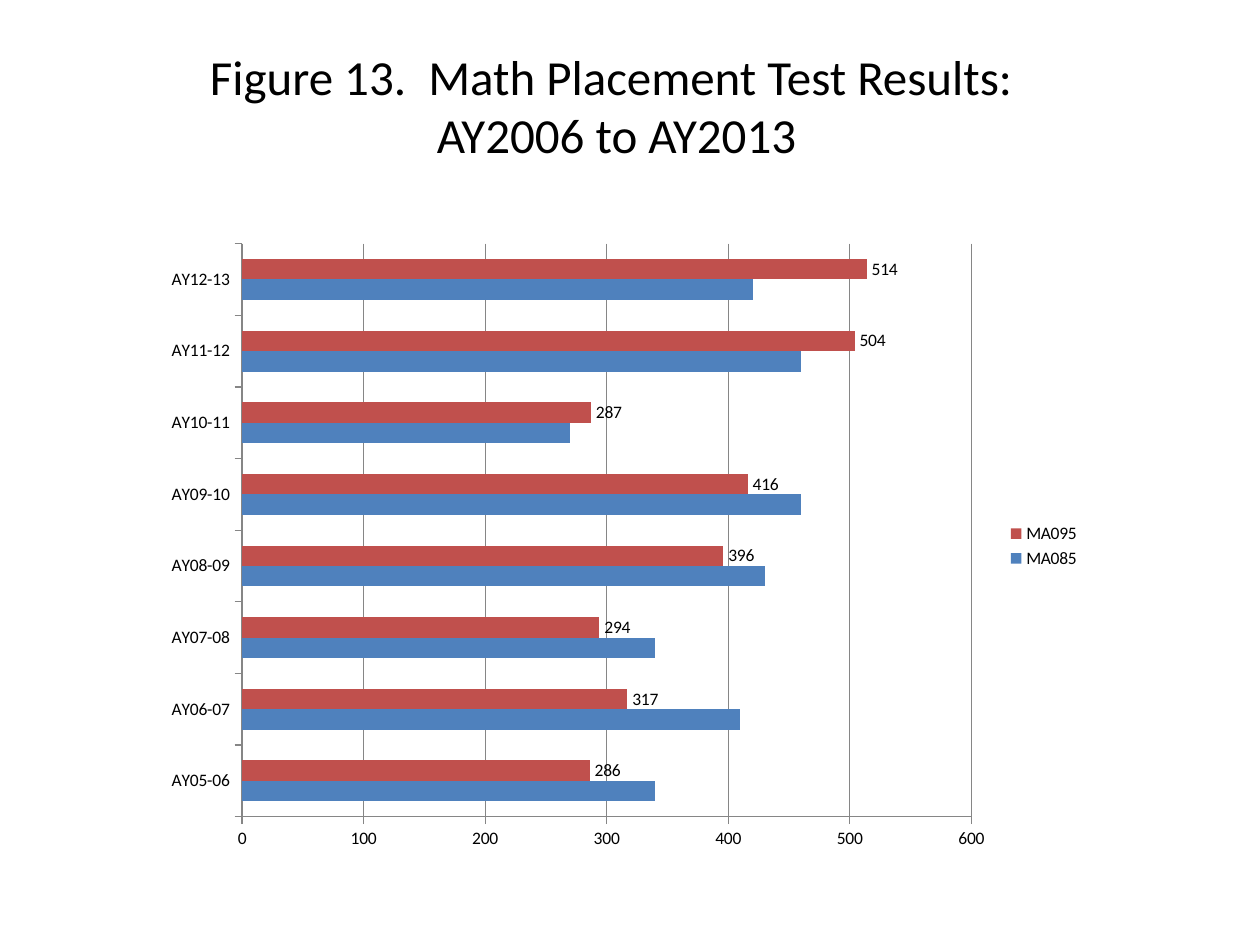
import pptx
import pptx.chart.data
import pptx.dml.color
import pptx.enum.chart
import pptx.enum.text
import pptx.oxml
import pptx.oxml.ns
import pptx.util

PX = 914400 / 126
TITLE = "Figure 13.  Math Placement Test Results:  AY2006 to AY2013"
YEARS = [f"AY{year:02}-{year + 1:02}" for year in range(5, 13)]
SERIES = {
    "MA085": ([340, 410, 340, 430, 460, 270, 460, 420], "4F81BD"),
    "MA095": ([286, 317, 294, 396, 416, 287, 504, 514], "C0504D"),
}
LABELED_SERIES = "MA095"


def px(length):
    return pptx.util.Emu(round(length * PX))


def color(hex_string):
    return pptx.dml.color.RGBColor.from_string(hex_string)


class SlideBuilder:
    font_name = "Calibri"
    text_color = "000000"
    line_color = "868686"

    def __init__(self, slide):
        self.slide = slide

    def style_font(self, font, size):
        font.name = self.font_name
        font.size = pptx.util.Pt(size)
        font.bold = False
        font.color.rgb = color(self.text_color)

    def add_title(self, text, left, top, width, height, size):
        shape = self.slide.shapes.add_textbox(*map(px, (left, top, width, height)))
        frame = shape.text_frame
        frame.word_wrap = True
        frame.vertical_anchor = pptx.enum.text.MSO_ANCHOR.MIDDLE
        frame.margin_top, frame.margin_bottom = px(0), px(54)
        paragraph = frame.paragraphs[0]
        paragraph.text = text
        paragraph.alignment = pptx.enum.text.PP_ALIGN.CENTER
        self.style_font(paragraph.font, size)

    def add_bar_chart(self, categories, series_data, left, top, width, height, size):
        data = pptx.chart.data.CategoryChartData()
        data.categories = categories
        for name, (values, _) in series_data.items():
            data.add_series(name, values)
        chart = self.slide.shapes.add_chart(
            pptx.enum.chart.XL_CHART_TYPE.BAR_CLUSTERED,
            *map(px, (left, top, width, height)), data).chart
        self.style_font(chart.font, size)
        chart.has_title = False
        chart.has_legend = True
        chart.legend.position = pptx.enum.chart.XL_LEGEND_POSITION.RIGHT
        chart.legend.include_in_layout = False

        plot = chart.plots[0]
        plot.vary_by_categories = False
        plot.gap_width = 150
        plot.overlap = 0
        for series in plot.series:
            series.format.fill.solid()
            series.format.fill.fore_color.rgb = color(series_data[series.name][1])
            series.invert_if_negative = False
            if series.name == LABELED_SERIES:
                labels = series.data_labels
                labels.show_value = True
                labels.position = pptx.enum.chart.XL_LABEL_POSITION.OUTSIDE_END
                self.style_font(labels.font, size)
        self.style_axes(chart)
        return chart

    def style_axes(self, chart):
        value_axis = chart.value_axis
        value_axis.minimum_scale = 0
        value_axis.maximum_scale = 600
        value_axis.major_unit = 100
        value_axis.has_major_gridlines = True
        for axis in (chart.category_axis, value_axis):
            axis.major_tick_mark = pptx.enum.chart.XL_TICK_MARK.OUTSIDE
            axis.minor_tick_mark = pptx.enum.chart.XL_TICK_MARK.NONE
        for part in (chart.category_axis, value_axis, value_axis.major_gridlines):
            part.format.line.color.rgb = color(self.line_color)
            part.format.line.width = pptx.util.Pt(0.75)

    def place_plot(self, chart, **fractions):
        """Set the inner plot area as fractions of the chart."""
        parts = '<c:layoutTarget val="inner"/><c:xMode val="edge"/><c:yMode val="edge"/>'
        parts += "".join(f'<c:{key} val="{value}"/>' for key, value in fractions.items())
        layout = pptx.oxml.parse_xml(
            f'<c:layout {pptx.oxml.ns.nsdecls("c")}><c:manualLayout>{parts}'
            "</c:manualLayout></c:layout>")
        plot_area = chart.plots[0]._element.getparent()
        for old_layout in plot_area.findall(pptx.oxml.ns.qn("c:layout")):
            plot_area.remove(old_layout)
        plot_area.insert(0, layout)


def main():
    presentation = pptx.Presentation()
    presentation.slide_width = pptx.util.Inches(10)
    presentation.slide_height = pptx.util.Inches(7.5)
    builder = SlideBuilder(presentation.slides.add_slide(presentation.slide_layouts[6]))
    builder.add_title(TITLE, 168, 53, 897, 158, size=28)
    chart = builder.add_bar_chart(YEARS, SERIES, 158, 231, 935, 630, size=10)
    builder.place_plot(chart, x=0.09, y=0.02, w=0.78, h=0.91)
    presentation.save("out.pptx")


if __name__ == "__main__":
    main()
